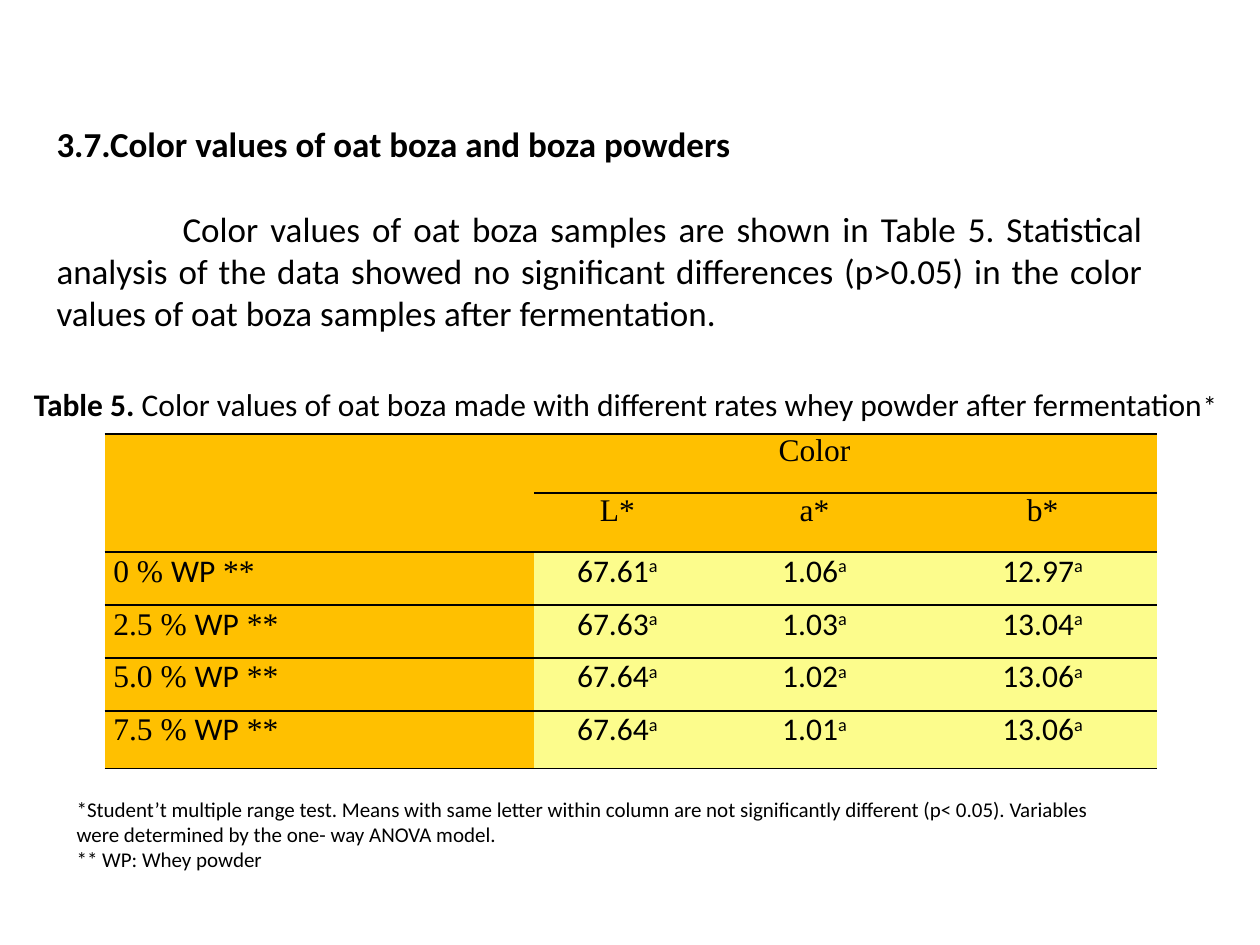
"""Build the slide on the color values of oat boza."""
from dataclasses import dataclass
from typing import Optional

import pptx
import pptx.dml.color
import pptx.enum.text
import pptx.oxml
import pptx.oxml.ns
import pptx.util

ALIGN = pptx.enum.text.PP_ALIGN
PLAIN_TABLE_STYLE = "{2D5ABB26-0587-4C30-8999-92F81FD0307C}"


@dataclass(frozen=True)
class Theme:
    ink: str = "000000"
    header: str = "FFC000"
    value: str = "FCFC8C"
    sans: str = "Calibri"
    serif: str = "Times New Roman"
    body: int = 20
    table: int = 18
    mark: int = 16
    note: int = 12
    rule: float = 1


THEME = Theme()


@dataclass(frozen=True)
class Span:
    text: str
    face: Optional[str] = None
    size: Optional[int] = None
    bold: Optional[bool] = None
    raised: bool = False


@dataclass(frozen=True)
class Line:
    spans: tuple[Span, ...]
    size: int
    face: Optional[str] = THEME.sans
    bold: Optional[bool] = None
    align: ALIGN = ALIGN.LEFT
    before: float = 0
    indent: float = 0


@dataclass(frozen=True)
class Block:
    left: float
    top: float
    width: float
    height: float
    lines: tuple[Line, ...]


BLOCKS = (
    Block(0.035, 0.123, 0.882, 0.237, (
        Line((Span("3.7.Color values of oat boza and boza powders"),), THEME.body, bold=True),
        Line((Span("Color values of oat boza samples are shown in Table 5. Statistical analysis of the "
                   "data showed no significant differences (p>0.05) in the color values of oat boza "
                   "samples after fermentation."),),
             THEME.body, align=ALIGN.JUSTIFY, before=24.4, indent=1),
    )),
    Block(0.017, 0.401, 0.968, 0.053, (
        Line((Span("Table 5. ", bold=True),
              Span("Color values of oat boza made with different rates whey powder after fermentation"),
              Span("*", size=THEME.mark)), THEME.table),
    )),
    Block(0.051, 0.836, 0.85, 0.095, (
        Line((Span("*Student’t multiple range test. Means with same letter within column are not "
                   "significantly different (p< 0.05). Variables were determined by the one- way "
                   "ANOVA model."),), THEME.note),
        Line((Span("** WP: Whey powder"),), THEME.note),
    )),
)
COLUMNS = (3.41, 1.32, 1.81, 1.81)
ROWS = (0.47, 0.47, 0.42, 0.42, 0.42, 0.46)
HEADINGS = (("", "", "Color", ""), ("", "L*", "a*", "b*"))
SAMPLES = (
    ("0", "67.61", "1.06", "12.97"),
    ("2.5", "67.63", "1.03", "13.04"),
    ("5.0", "67.64", "1.02", "13.06"),
    ("7.5", "67.64", "1.01", "13.06"),
)


def style_font(font, face: Optional[str], size: Optional[int], bold: Optional[bool]) -> None:
    """Set the given font properties."""
    if face:
        font.name = face
    if size:
        font.size = pptx.util.Pt(size)
    if bold is not None:
        font.bold = bold


def write_lines(frame, lines: tuple[Line, ...]) -> None:
    """Fill a text frame with styled paragraphs."""
    for index, line in enumerate(lines):
        para = frame.add_paragraph() if index else frame.paragraphs[0]
        para.alignment = line.align
        if line.before:
            para.space_before = pptx.util.Pt(line.before)
        if line.indent:
            para._p.get_or_add_pPr().set("indent", str(pptx.util.Inches(line.indent)))
        style_font(para.font, line.face, line.size, line.bold)
        para.font.color.rgb = pptx.dml.color.RGBColor.from_string(THEME.ink)
        for part in line.spans:
            span = para.add_run()
            span.text = part.text
            style_font(span.font, part.face, part.size, part.bold)
            if part.raised:
                span._r.get_or_add_rPr().set("baseline", "30000")


def add_block(deck, page, block: Block) -> None:
    """Add a wrapped text box placed by shares of the slide."""
    box = page.shapes.add_textbox(
        int(block.left * deck.slide_width), int(block.top * deck.slide_height),
        int(block.width * deck.slide_width), int(block.height * deck.slide_height))
    box.text_frame.word_wrap = True
    write_lines(box.text_frame, block.lines)


def add_border(cell, side: str, visible: bool) -> None:
    """Draw or clear one side of a cell."""
    paint = f'<a:solidFill><a:srgbClr val="{THEME.ink}"/></a:solidFill>' if visible else "<a:noFill/>"
    cell._tc.get_or_add_tcPr().append(pptx.oxml.parse_xml(
        f'<a:{side} {pptx.oxml.ns.nsdecls("a")} w="{pptx.util.Pt(THEME.rule)}">{paint}</a:{side}>'))


def cell_line(row: int, column: int) -> Line:
    """Return the text of one table cell."""
    if row < len(HEADINGS):
        return Line((Span(HEADINGS[row][column]),), THEME.table, THEME.serif, align=ALIGN.CENTER)
    value = SAMPLES[row - len(HEADINGS)][column]
    if column:
        return Line((Span(value), Span("a", raised=True)), THEME.table, align=ALIGN.CENTER)
    return Line((Span(f"{value} % ", THEME.serif), Span("WP", THEME.sans), Span(" **", THEME.serif)),
                THEME.table, face=None)


def add_color_table(deck, page) -> None:
    """Add the table of color values."""
    holder = page.shapes.add_table(
        len(ROWS), len(COLUMNS), int(0.083 * deck.slide_width), int(0.459 * deck.slide_height),
        pptx.util.Inches(sum(COLUMNS)), pptx.util.Inches(sum(ROWS)))
    table = holder.table
    table.first_row = table.horz_banding = False
    table._tbl.tblPr.find(pptx.oxml.ns.qn("a:tableStyleId")).text = PLAIN_TABLE_STYLE
    for column, width in enumerate(COLUMNS):
        table.columns[column].width = pptx.util.Inches(width)
    for row, height in enumerate(ROWS):
        table.rows[row].height = pptx.util.Inches(height)
        for column in range(len(COLUMNS)):
            cell = table.cell(row, column)
            cell.margin_left = cell.margin_right = pptx.util.Inches(0.07)
            cell.margin_top = cell.margin_bottom = 0
            for side in ("lnL", "lnR"):
                add_border(cell, side, False)
            add_border(cell, "lnT", (row, column) != (1, 0))
            add_border(cell, "lnB", (row, column) != (0, 0))
            heading = row < len(HEADINGS) or column == 0
            cell.fill.solid()
            cell.fill.fore_color.rgb = pptx.dml.color.RGBColor.from_string(
                THEME.header if heading else THEME.value)
            line = cell_line(row, column)
            if line.spans[0].text:
                write_lines(cell.text_frame, (line,))
    table.cell(0, 0).merge(table.cell(1, 0))


def main() -> None:
    """Build and save the deck."""
    deck = pptx.Presentation()
    deck.slide_width, deck.slide_height = pptx.util.Inches(10), pptx.util.Inches(7.5)
    page = deck.slides.add_slide(deck.slide_layouts[6])
    for block in BLOCKS:
        add_block(deck, page, block)
    add_color_table(deck, page)
    deck.save("out.pptx")


if __name__ == "__main__":
    main()
